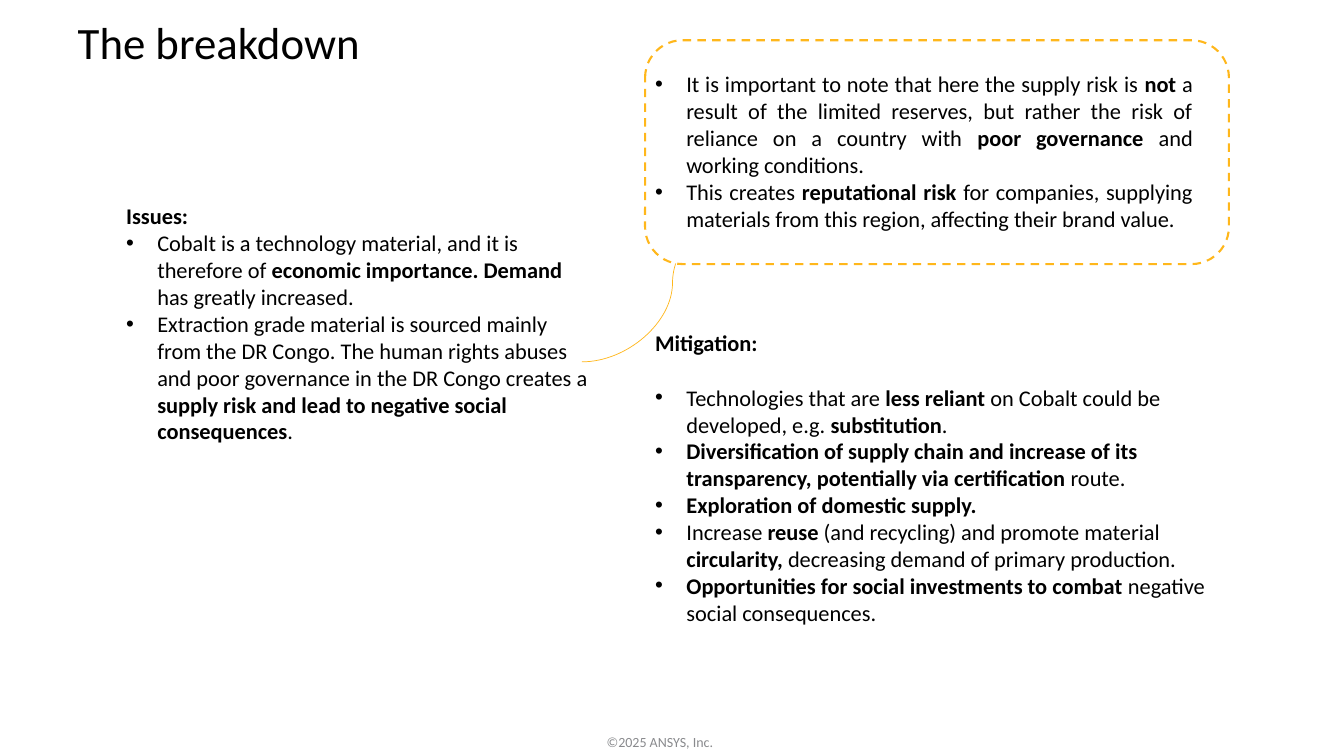
from dataclasses import dataclass

from lxml.etree import SubElement
from pptx import Presentation
from pptx.dml.color import RGBColor
from pptx.enum.dml import MSO_LINE
from pptx.enum.shapes import MSO_CONNECTOR as Connector, MSO_SHAPE as Preset
from pptx.enum.text import MSO_ANCHOR as Anchor, MSO_AUTO_SIZE as AutoSize, PP_ALIGN as Align
from pptx.oxml.ns import qn
from pptx.util import Emu, Inches, Pt

SLIDE_WIDTH, SLIDE_HEIGHT = Inches(13.33), Inches(7.5)


@dataclass(frozen=True)
class Theme:
    font: str = "Calibri"
    ink: RGBColor = RGBColor(0, 0, 0)
    muted: RGBColor = RGBColor(0x89, 0x8A, 0x8D)
    accent: RGBColor = RGBColor(0xFF, 0xB7, 0x1B)
    paper: RGBColor = RGBColor(0xFF, 0xFF, 0xFF)
    title_size: float = 32
    body_size: float = 16
    footer_size: float = 10
    hanging: float = 0.31


THEME = Theme()


def across(percent: float) -> Emu:
    return Emu(round(SLIDE_WIDTH * percent / 100))


def down(percent: float) -> Emu:
    return Emu(round(SLIDE_HEIGHT * percent / 100))


@dataclass(frozen=True)
class Area:
    left: float
    top: float
    width: float
    height: float

    def lengths(self) -> tuple[Emu, Emu, Emu, Emu]:
        return across(self.left), down(self.top), across(self.width), down(self.height)


@dataclass(frozen=True)
class Section:
    area: Area
    heading: str
    bullets: tuple[str, ...]
    heading_gap: float = 0


TITLE_AREA = Area(5.03, 2.13, 90, 12.4)
FOOTER_AREA = Area(44.4, 96.4, 11.25, 3.6)
CALLOUT_AREA = Area(48, 5.33, 43.44, 29.6)
CALLOUT_TEXT_AREA = Area(48, 8.67, 41.49, 16.8)

SECTIONS = (
    Section(
        Area(8.63, 26.13, 36.08, 37.2),
        "**Issues:**",
        (
            "Cobalt is a technology material, and it is therefore of "
            "**economic importance. Demand** has greatly increased.",
            "Extraction grade material is sourced mainly from the DR Congo. The human rights "
            "abuses and poor governance in the DR Congo creates a "
            "**supply risk and lead to negative social consequences**.",
        ),
    ),
    Section(
        Area(48, 42.93, 43.44, 40.8),
        "**Mitigation:**",
        (
            "Technologies that are **less reliant **on Cobalt could be developed, "
            "e.g. **substitution**.",
            "**Diversification of supply chain and increase of its transparency, "
            "potentially via certification** route.",
            "**Exploration of domestic supply.**",
            "Increase **reuse **(and recycling) and promote material **circularity, **"
            "decreasing demand of primary production.",
            "**Opportunities for social investments to combat **negative social consequences.",
        ),
        heading_gap=19.5,
    ),
)

CALLOUT_BULLETS = (
    "It is important to note that here the supply risk is **not** a result of the limited "
    "reserves, but rather the risk of reliance on a country with **poor governance **"
    "and working conditions.",
    "This creates **reputational risk **for companies, supplying materials from this region, "
    "affecting their brand value.",
)


def set_bullet(paragraph, bulleted: bool) -> None:
    properties = paragraph._p.get_or_add_pPr()
    indent = Inches(THEME.hanging) if bulleted else 0
    properties.set("marL", str(indent))
    properties.set("indent", str(-indent))
    if bulleted:
        SubElement(properties, qn("a:buFont"), typeface="Arial")
        SubElement(properties, qn("a:buChar"), char="•")
    else:
        SubElement(properties, qn("a:buNone"))


def write(shape, text: str, *, size: float = THEME.body_size, color: RGBColor = THEME.ink,
          align: Align = Align.LEFT, bulleted: bool = False, new_paragraph: bool = False,
          line_spacing: float = 1.0, space_after: float = 0) -> None:
    frame = shape.text_frame
    frame.word_wrap = True
    frame.auto_size = AutoSize.NONE
    frame.vertical_anchor = Anchor.TOP
    paragraph = frame.add_paragraph() if new_paragraph else frame.paragraphs[0]
    set_bullet(paragraph, bulleted)
    paragraph.alignment = align
    paragraph.line_spacing = line_spacing
    paragraph.space_before = Pt(0)
    paragraph.space_after = Pt(space_after)
    for position, part in enumerate(text.split("**")):
        if part:
            run = paragraph.add_run()
            run.text = part
            run.font.name = THEME.font
            run.font.size = Pt(size)
            run.font.bold = position % 2 == 1
            run.font.color.rgb = color


def place(shape, area: Area) -> None:
    shape.left, shape.top, shape.width, shape.height = area.lengths()


def fill_section(placeholder, section: Section) -> None:
    place(placeholder, section.area)
    write(placeholder, section.heading, space_after=section.heading_gap)
    for bullet in section.bullets:
        write(placeholder, bullet, bulleted=True, new_paragraph=True)


def draw_link(slide) -> None:
    link = slide.shapes.add_connector(
        Connector.CURVE, across(43.29), down(47.87), across(56.79), down(26.93))
    link.line.color.rgb = THEME.accent
    link.line.width = Pt(0.5)
    properties = link._element.spPr
    SubElement(properties.find(qn("a:ln")), qn("a:tailEnd"), type="triangle")
    SubElement(properties, qn("a:effectLst"))


def draw_callout(slide) -> None:
    frame = slide.shapes.add_shape(Preset.ROUNDED_RECTANGLE, *CALLOUT_AREA.lengths())
    frame.shadow.inherit = False
    frame.fill.solid()
    frame.fill.fore_color.rgb = THEME.paper
    frame.line.color.rgb = THEME.accent
    frame.line.width = Pt(1.5)
    frame.line.dash_style = MSO_LINE.DASH
    text_box = slide.shapes.add_textbox(*CALLOUT_TEXT_AREA.lengths())
    for position, bullet in enumerate(CALLOUT_BULLETS):
        write(text_box, bullet, bulleted=True, align=Align.JUSTIFY, new_paragraph=position > 0)


def main() -> None:
    presentation = Presentation()
    presentation.slide_width, presentation.slide_height = SLIDE_WIDTH, SLIDE_HEIGHT
    slide = presentation.slides.add_slide(presentation.slide_layouts.get_by_name("Two Content"))
    title, *bodies = slide.placeholders
    place(title, TITLE_AREA)
    write(title, "The breakdown", size=THEME.title_size, line_spacing=0.9)
    for body, section in zip(bodies, SECTIONS):
        fill_section(body, section)
    draw_link(slide)
    draw_callout(slide)
    footer = slide.shapes.add_textbox(*FOOTER_AREA.lengths())
    write(footer, "©2025 ANSYS, Inc.", size=THEME.footer_size, color=THEME.muted)
    presentation.save("out.pptx")


if __name__ == "__main__":
    main()
